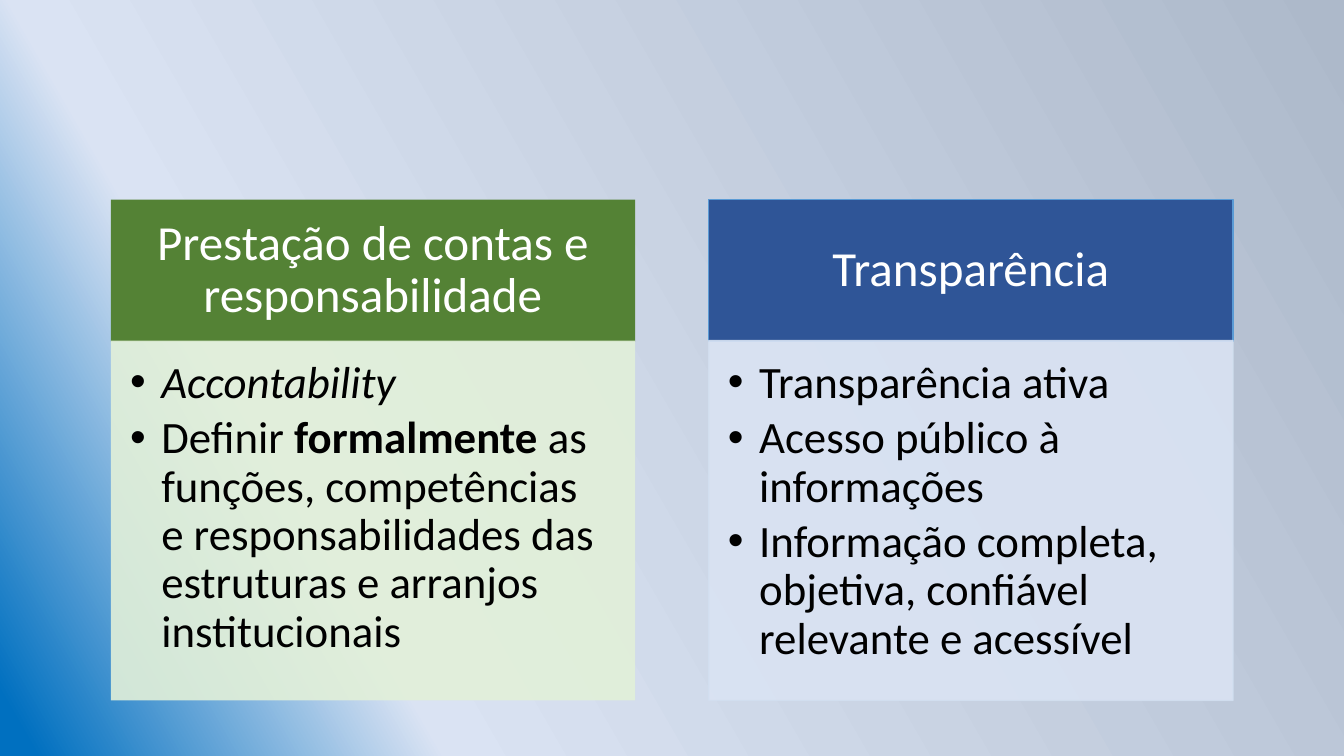
from lxml import etree
from pptx import Presentation, oxml
from pptx.dml.color import RGBColor
from pptx.enum import shapes, text
from pptx.oxml.ns import nsdecls, qn
from pptx.util import Inches, Pt

COLORS = {
    "slate": "ADB9CA", "mist": "DAE3F3", "blue": "0070C0",
    "green": "548235", "pale_green": "E2F0D9",
    "navy": "2F5597", "sky": "5B9BD5", "pale_line": "D2DFF0",
    "white": "FFFFFF", "black": "000000",
}
BACKGROUND_STOPS = [(0, "slate"), (75, "mist"), (98, "blue")]
BACKGROUND_ANGLE = 150

# Each paragraph is a list of (text, style) runs.
COLUMNS = [
    {
        "title": "Prestação de contas e responsabilidade",
        "header": ("green", None), "body": ("pale_green", None),
        "items": [
            [("Accontability", "italic")],
            [("Definir ", ""), ("formalmente", "bold"),
             (" as funções, competências e responsabilidades das "
              "estruturas e arranjos institucionais", "")],
        ],
    },
    {
        "title": "Transparência",
        "header": ("navy", "sky"), "body": ("mist", "pale_line"),
        "items": [
            [("Transparência ativa", "")],
            [("Acesso público à informações", "")],
            [("Informação completa, objetiva, confiável relevante e acessível", "")],
        ],
    },
]
LEFT, TOP, WIDTH, COLUMN_STEP = 1.1, 1.98, 5.2, 5.93
HEADER_HEIGHT, BODY_TOP, BODY_HEIGHT = 1.41, 3.38, 3.57
HEADER_INSETS = (0.27, 0.16, 0.27, 0.16)
BODY_INSETS = (0.19, 0.19, 0.25, 0.28)
BULLET_INDENT = 0.31
BODY_OPACITY = 90


def rgb(name):
    return RGBColor.from_string(COLORS[name])


def set_background(slide):
    stops = "".join(
        f'<a:gs pos="{position * 1000}"><a:srgbClr val="{COLORS[name]}"/></a:gs>'
        for position, name in BACKGROUND_STOPS)
    background = oxml.parse_xml(
        f'<p:bg {nsdecls("p", "a")}><p:bgPr><a:gradFill rotWithShape="1">'
        f'<a:gsLst>{stops}</a:gsLst><a:lin ang="{BACKGROUND_ANGLE * 60000}" scaled="0"/>'
        '</a:gradFill><a:effectLst/></p:bgPr></p:bg>')
    slide.element.cSld.insert(0, background)


def add_panel(slide, box, colors, insets, anchor, opacity=100):
    fill_color, line_color = colors
    panel = slide.shapes.add_shape(
        shapes.MSO_SHAPE.RECTANGLE, *(Inches(length) for length in box))
    panel.shadow.inherit = False
    panel.fill.solid()
    panel.fill.fore_color.rgb = rgb(fill_color)
    if line_color:
        panel.line.color.rgb = rgb(line_color)
        panel.line.width = Pt(1)
    else:
        panel.line.fill.background()
    if opacity < 100:
        for color in panel.element.spPr.iter(qn("a:srgbClr")):
            etree.SubElement(color, qn("a:alpha"), val=str(opacity * 1000))
    frame = panel.text_frame
    frame.word_wrap = True
    frame.vertical_anchor = anchor
    (frame.margin_left, frame.margin_top,
     frame.margin_right, frame.margin_bottom) = map(Inches, insets)
    return frame


def write_paragraph(paragraph, runs, size, color, alignment, space_after=0):
    paragraph.alignment = alignment
    paragraph.line_spacing = 0.9
    paragraph.space_after = Pt(space_after)
    for words, style in runs:
        run = paragraph.add_run()
        run.text = words
        run.font.name = "Calibri"
        run.font.size = Pt(size)
        run.font.color.rgb = rgb(color)
        run.font.bold = style == "bold"
        run.font.italic = style == "italic"


def add_bullet(paragraph):
    properties = paragraph._p.get_or_add_pPr()
    properties.set("marL", str(Inches(BULLET_INDENT)))
    properties.set("indent", str(-Inches(BULLET_INDENT)))
    etree.SubElement(properties, qn("a:buFont"), typeface="Arial")
    etree.SubElement(properties, qn("a:buChar"), char="•")


def add_column(slide, left, column):
    header = add_panel(slide, (left, TOP, WIDTH, HEADER_HEIGHT), column["header"],
                       HEADER_INSETS, text.MSO_ANCHOR.MIDDLE)
    write_paragraph(header.paragraphs[0], [(column["title"], "")], 35, "white",
                    text.PP_ALIGN.CENTER)
    body = add_panel(slide, (left, BODY_TOP, WIDTH, BODY_HEIGHT), column["body"],
                     BODY_INSETS, text.MSO_ANCHOR.TOP, BODY_OPACITY)
    for index, runs in enumerate(column["items"]):
        paragraph = body.add_paragraph() if index else body.paragraphs[0]
        add_bullet(paragraph)
        write_paragraph(paragraph, runs, 32, "black", text.PP_ALIGN.LEFT, 4.8)


def main():
    presentation = Presentation()
    presentation.slide_width = Inches(13.33)
    presentation.slide_height = Inches(7.5)
    slide = presentation.slides.add_slide(presentation.slide_layouts[6])
    set_background(slide)
    for index, column in enumerate(COLUMNS):
        add_column(slide, LEFT + index * COLUMN_STEP, column)
    presentation.save("out.pptx")


if __name__ == "__main__":
    main()
